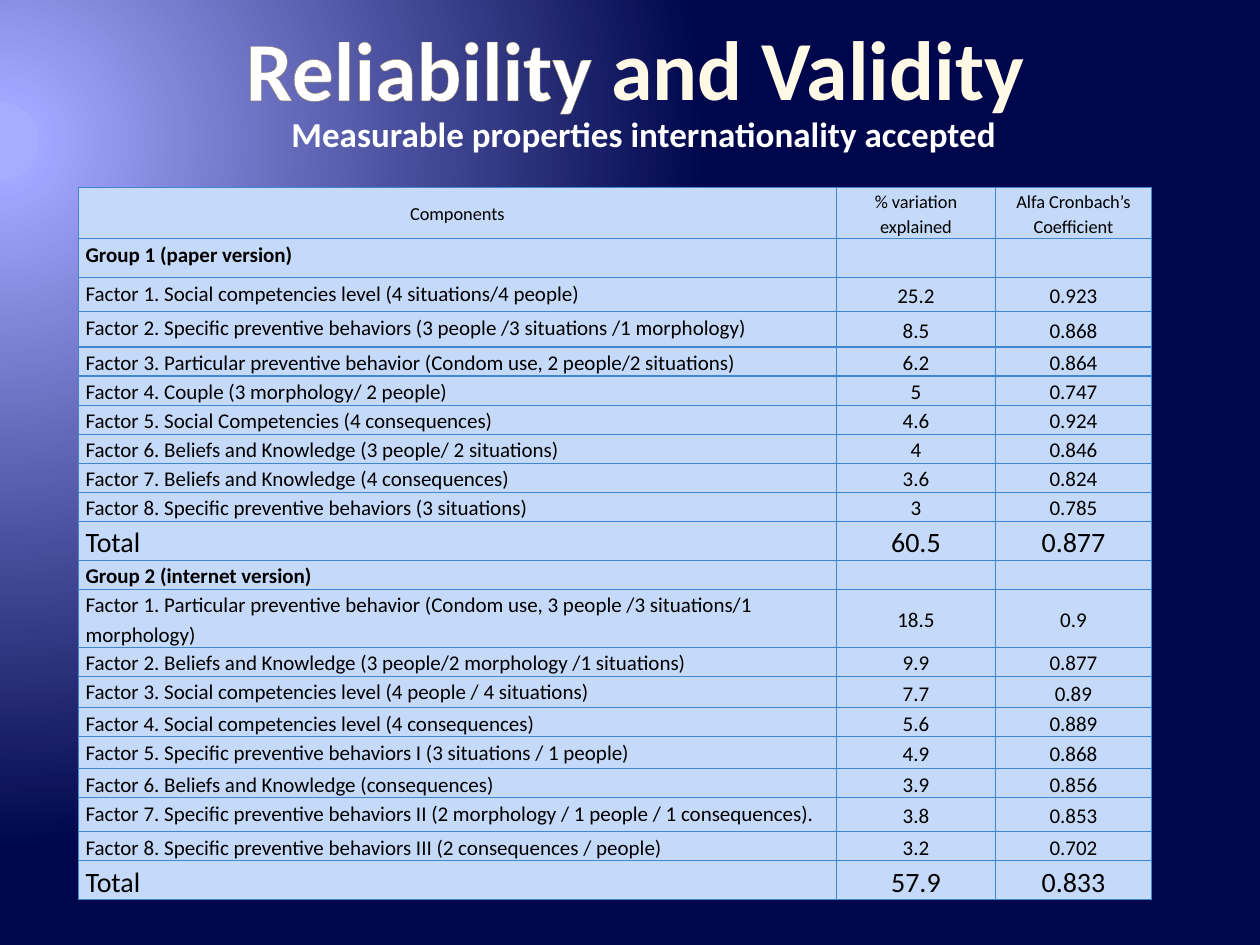
"""Build the Reliability and Validity slide with its table of factors."""
import dataclasses
import typing

import lxml.etree
import pptx
import pptx.dml.color
import pptx.enum.text
import pptx.oxml
import pptx.oxml.ns
import pptx.util

WIDTH, HEIGHT = pptx.util.Inches(10), pptx.util.Inches(7.5)
COLORS = {
    "glow": "A8ACFF", "halo": "A3A7FF", "night": "00064B",
    "white": "FFFFFF", "cream": "FFF9E5", "outline": "8F8462",
    "cell": "C5D9F9", "border": "3F88D1", "ink": "000000",
}
NAMESPACE = pptx.oxml.ns.nsdecls("a", "p")
ALIGN = pptx.enum.text.PP_ALIGN
ANCHOR = pptx.enum.text.MSO_ANCHOR
COLUMNS = (6.02, 1.26, 1.24)
LINE = 0.23


@dataclasses.dataclass
class Row:
    """One table row: its texts, height in inches and text format."""
    label: str
    variation: str = ""
    alfa: str = ""
    height: float = LINE
    size: float = 12
    bold: bool = False
    align: ALIGN = ALIGN.LEFT
    anchor: ANCHOR = ANCHOR.TOP


def total(variation: str, alfa: str) -> Row:
    """Return a row that closes a group."""
    return Row("Total", variation, alfa, height=0.31, size=16)


ROWS = [
    Row("Components", "% variation explained", "Alfa Cronbach’s Coefficient",
        height=0.41, size=10.5, align=ALIGN.CENTER, anchor=ANCHOR.MIDDLE),
    Row("Group 1 (paper version)", height=0.31, bold=True),
    Row("Factor 1. Social competencies level (4 situations/4 people)", "25.2", "0.923", 0.27),
    Row("Factor 2. Specific preventive behaviors (3 people /3 situations /1 morphology)",
        "8.5", "0.868", 0.28),
    Row("Factor 3. Particular preventive behavior (Condom use, 2 people/2 situations)",
        "6.2", "0.864"),
    Row("Factor 4. Couple (3 morphology/ 2 people)", "5", "0.747"),
    Row("Factor 5. Social Competencies (4 consequences)", "4.6", "0.924"),
    Row("Factor 6. Beliefs and Knowledge (3 people/ 2 situations)", "4", "0.846"),
    Row("Factor 7. Beliefs and Knowledge (4 consequences)", "3.6", "0.824"),
    Row("Factor 8. Specific preventive behaviors (3 situations)", "3", "0.785"),
    total("60.5", "0.877"),
    Row("Group 2 (internet version)", bold=True, anchor=ANCHOR.MIDDLE),
    Row("Factor 1. Particular preventive behavior (Condom use, 3 people /3 situations/1 morphology)",
        "18.5", "0.9", 2 * LINE),
    Row("Factor 2. Beliefs and Knowledge (3 people/2 morphology /1 situations)", "9.9", "0.877"),
    Row("Factor 3. Social competencies level (4 people / 4 situations)", "7.7", "0.89", 0.25),
    Row("Factor 4. Social competencies level (4 consequences)", "5.6", "0.889"),
    Row("Factor 5. Specific preventive behaviors I (3 situations / 1 people)",
        "4.9", "0.868", 0.25),
    Row("Factor 6. Beliefs and Knowledge (consequences)", "3.9", "0.856"),
    Row("Factor 7. Specific preventive behaviors II (2 morphology / 1 people / 1 consequences).",
        "3.8", "0.853", 0.27),
    Row("Factor 8. Specific preventive behaviors III (2 consequences / people)", "3.2", "0.702"),
    total("57.9", "0.833"),
]


def apply(target: typing.Any, values: dict) -> None:
    """Set each named attribute on the target."""
    for name, value in values.items():
        setattr(target, name, value)


def place(left: float, top: float, width: float, height: float) -> dict:
    """Turn shares of the slide into a position."""
    return {"left": round(left * WIDTH), "top": round(top * HEIGHT),
            "width": round(width * WIDTH), "height": round(height * HEIGHT)}


def add_span(para: typing.Any, text: str, size: float, color: str, bold: bool) -> typing.Any:
    """Add a formatted run to a paragraph."""
    span = para.add_run()
    span.text = text
    apply(span.font, {"name": "Calibri", "size": pptx.util.Pt(size), "bold": bold})
    span.font.color.rgb = pptx.dml.color.RGBColor.from_string(COLORS[color])
    return span


def solid(color: str) -> str:
    """Return the XML of a solid fill."""
    return f'<a:solidFill><a:srgbClr val="{COLORS[color]}"/></a:solidFill>'


def paint_background(page: typing.Any) -> None:
    """Fill the background with a radial gradient."""
    stops = "".join(
        f'<a:gs pos="{share * 1000}"><a:srgbClr val="{COLORS[color]}"/></a:gs>'
        for share, color in ((5, "glow"), (5, "halo"), (90, "night")))
    page.background.fill.solid()
    properties = page.background._cSld.bg.bgPr
    properties.replace(properties[0], pptx.oxml.parse_xml(
        f'<a:gradFill {NAMESPACE} rotWithShape="1"><a:gsLst>{stops}</a:gsLst>'
        '<a:path path="circle"><a:fillToRect l="20000" t="30000" r="135000" b="100000"/>'
        '</a:path></a:gradFill>'))


def add_headings(page: typing.Any) -> None:
    """Write the title and the line under it."""
    title = page.shapes.title
    apply(title, place(0.079, -0.073, 0.85, 0.199))
    inset = pptx.util.Inches(0.01)
    apply(title.text_frame, {
        "vertical_anchor": ANCHOR.BOTTOM, "word_wrap": True, "margin_left": 0,
        "margin_right": 0, "margin_top": inset, "margin_bottom": inset,
        "auto_size": pptx.enum.text.MSO_AUTO_SIZE.NONE})
    para = title.text_frame.paragraphs[0]
    para.alignment = ALIGN.CENTER
    span = add_span(para, "Reliability", 48, "white", True)
    span.font._element.insert(0, pptx.oxml.parse_xml(
        f'<a:ln {NAMESPACE} w="508">{solid("outline")}</a:ln>'))
    add_span(para, " and Validity", 48, "cream", True)

    box = page.shapes.add_textbox(**place(0.086, 0.113, 0.85, 0.084))
    box.text_frame.word_wrap = True
    para = box.text_frame.paragraphs[0]
    apply(para, {"alignment": ALIGN.CENTER, "space_before": pptx.util.Pt(4)})
    add_span(para, "Measurable properties internationality accepted", 20, "white", True)


def fill_cell(cell: typing.Any, text: str, row: Row, is_label: bool) -> None:
    """Write and format one table cell."""
    inset = pptx.util.Inches(0.06)
    apply(cell, {"margin_left": inset, "margin_right": inset, "margin_top": 0,
                 "margin_bottom": 0,
                 "vertical_anchor": row.anchor if is_label else ANCHOR.MIDDLE})
    para = cell.text_frame.paragraphs[0]
    apply(para, {"alignment": row.align if is_label else ALIGN.CENTER, "line_spacing": 1.15})
    if text:
        add_span(para, text, row.size, "ink", row.bold and is_label)
    else:
        lxml.etree.SubElement(para._p, pptx.oxml.ns.qn("a:endParaRPr"), sz="1200")
    properties = cell._tc.get_or_add_tcPr()
    for side in ("lnL", "lnR", "lnT", "lnB"):
        properties.append(pptx.oxml.parse_xml(
            f'<a:{side} {NAMESPACE} w="9525">{solid("border")}</a:{side}>'))
    cell.fill.solid()
    cell.fill.fore_color.rgb = pptx.dml.color.RGBColor.from_string(COLORS["cell"])


def add_factors(page: typing.Any) -> None:
    """Add the table of components."""
    area = place(0.062, 0.198, sum(COLUMNS) / 10, sum(row.height for row in ROWS) / 7.5)
    table = page.shapes.add_table(len(ROWS), len(COLUMNS), **area).table
    apply(table, {"first_row": False, "horz_banding": False})
    for column, width in zip(table.columns, COLUMNS):
        column.width = pptx.util.Inches(width)
    for line, row in zip(table.rows, ROWS):
        line.height = pptx.util.Inches(row.height)
        for index, text in enumerate((row.label, row.variation, row.alfa)):
            fill_cell(line.cells[index], text, row, index == 0)


def main() -> None:
    """Build and save the deck."""
    deck = pptx.Presentation()
    apply(deck, {"slide_width": WIDTH, "slide_height": HEIGHT})
    page = deck.slides.add_slide(deck.slide_layouts.get_by_name("Title Only"))
    paint_background(page)
    add_headings(page)
    add_factors(page)
    deck.save("out.pptx")


if __name__ == "__main__":
    main()
